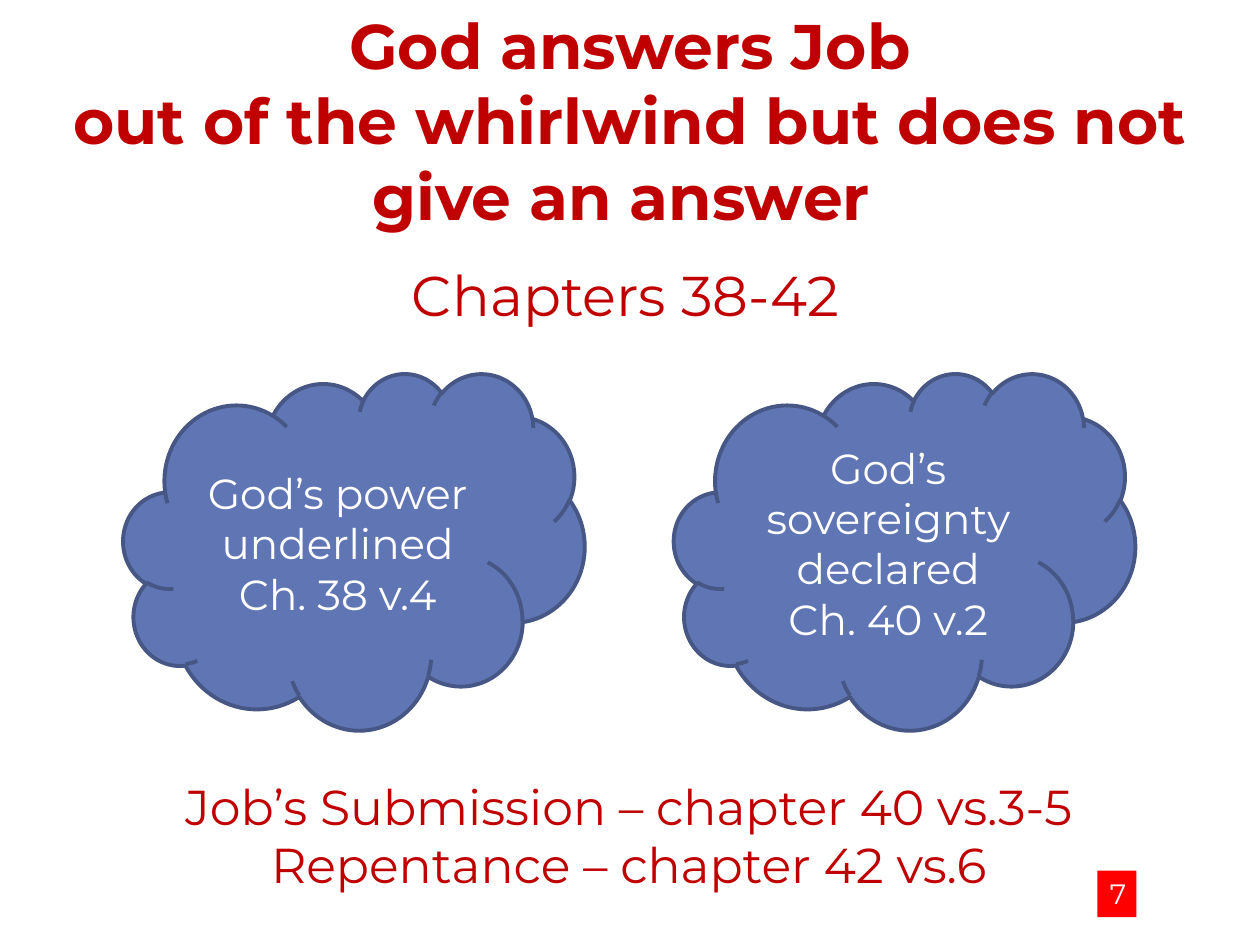
from pptx import Presentation
from pptx.dml.color import RGBColor
from pptx.enum import shapes, text
from pptx.util import Inches, Pt

RED = RGBColor(0xC0, 0x00, 0x00)
BRIGHT = RGBColor(0xFF, 0x00, 0x00)
BLUE = RGBColor(0x60, 0x76, 0xB4)
NAVY = RGBColor(0x47, 0x57, 0x85)
WHITE = RGBColor(0xFF, 0xFF, 0xFF)
FONT = "Montserrat"


def write(shape, words, size, color, bold=False, anchor=text.MSO_ANCHOR.TOP):
    frame = shape.text_frame
    frame.text = words
    frame.word_wrap = True
    frame.auto_size = text.MSO_AUTO_SIZE.NONE
    frame.vertical_anchor = anchor
    for para in frame.paragraphs:
        para.alignment = text.PP_ALIGN.CENTER
        for run in para.runs:
            run.font.name = FONT
            run.font.size = Pt(size)
            run.font.bold = bold
            run.font.color.rgb = color


def add_title(slide, words):
    title = slide.shapes.title
    title.left, title.top = Inches(0), Inches(0)
    title.width, title.height = Inches(10), Inches(1.92)
    write(title, words, 36, RED, bold=True)


def add_label(slide, box, words, size):
    label = slide.shapes.add_textbox(*map(Inches, box))
    write(label, words, size, RED)


def add_solid(slide, kind, box, fill):
    shape = slide.shapes.add_shape(kind, *map(Inches, box))
    shape.shadow.inherit = False
    shape.fill.solid()
    shape.fill.fore_color.rgb = fill
    return shape


def add_cloud(slide, left, words):
    cloud = add_solid(slide, shapes.MSO_SHAPE.CLOUD, (left, 2.96, 3.66, 2.83), BLUE)
    cloud.line.color.rgb = NAVY
    cloud.line.width = Pt(2.25)
    write(cloud, words, 24, WHITE, anchor=text.MSO_ANCHOR.MIDDLE)


def add_number(slide, words):
    badge = add_solid(slide, shapes.MSO_SHAPE.RECTANGLE, (8.71, 6.91, 0.31, 0.37), BRIGHT)
    badge.line.fill.background()
    write(badge, words, 16, WHITE)


def main():
    deck = Presentation()
    deck.slide_width, deck.slide_height = Inches(10), Inches(7.5)
    slide = deck.slides.add_slide(deck.slide_layouts[5])
    add_title(slide, "God answers Job\nout of the whirlwind but does not give an answer ")
    add_label(slide, (2.64, 2.02, 4.65, 0.64), "Chapters 38-42", 32)
    add_cloud(slide, 0.98, "God’s power underlined\nCh. 38 v.4")
    add_cloud(slide, 5.35, "God’s sovereignty declared\nCh. 40 v.2")
    add_label(slide, (-0.01, 6.11, 10, 1.04),
              "Job’s Submission – chapter 40 vs.3-5\nRepentance – chapter 42 vs.6", 28)
    add_number(slide, "7")
    deck.save("out.pptx")


if __name__ == "__main__":
    main()
